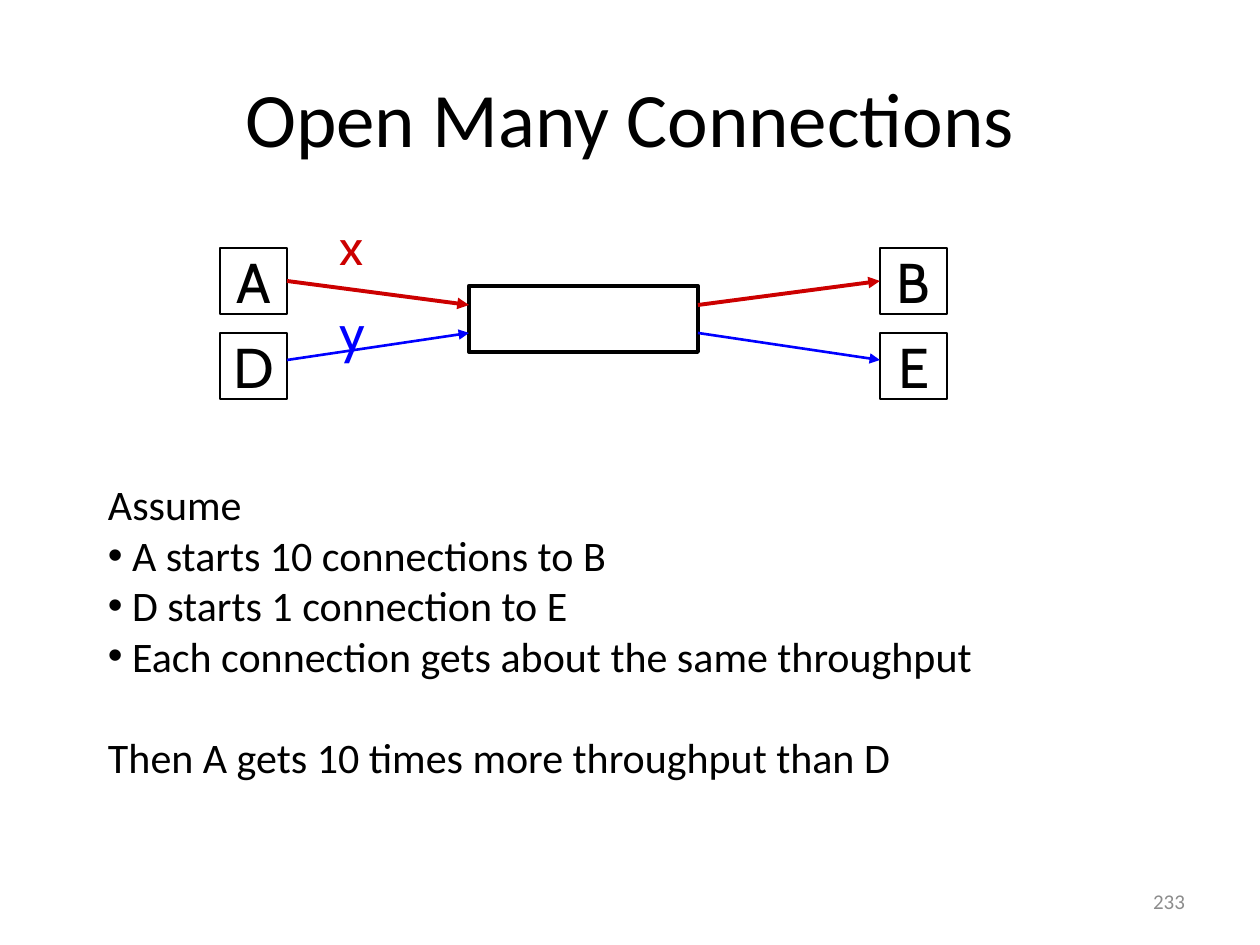
from typing import NamedTuple, Optional

from lxml import etree
from pptx import Presentation
from pptx import util as u
from pptx.dml.color import RGBColor
from pptx.enum import shapes, text
from pptx.oxml import ns

PX = 914400 / 126

BLACK = RGBColor(0x00, 0x00, 0x00)
WHITE = RGBColor(0xFF, 0xFF, 0xFF)
RED = RGBColor(0xCC, 0x00, 0x00)
BLUE = RGBColor(0x00, 0x00, 0xFF)
GRAY = RGBColor(0x8C, 0x8C, 0x8C)

LEFT, CENTER, RIGHT = text.PP_ALIGN.LEFT, text.PP_ALIGN.CENTER, text.PP_ALIGN.RIGHT
TOP, MIDDLE = text.MSO_ANCHOR.TOP, text.MSO_ANCHOR.MIDDLE

NODE_W, NODE_H = 67, 66
SOURCE_X, TARGET_X = 220, 880
ROUTER_X, ROUTER_Y, ROUTER_W = 469, 286, 229
LABEL_X, LABEL_W, LABEL_H = 335, 48, 71
BULLET_INDENT = 24


class Box(NamedTuple):
    x: int
    y: int
    w: int
    h: int


class Style(NamedTuple):
    size: int
    font: str = "Calibri"
    color: RGBColor = BLACK
    align: text.PP_ALIGN = LEFT
    anchor: text.MSO_ANCHOR = MIDDLE
    wrap: bool = True
    inset_x: int = 12
    inset_y: int = 6


class Flow(NamedTuple):
    """One source and target pair, with its arrows through the router."""
    source: str
    target: str
    label: str
    color: RGBColor
    width: float
    node_y: int
    node_port_y: int
    router_port_y: int
    label_y: int


class Line(NamedTuple):
    content: str
    bullet: bool = False
    space_before: int = 0


FLOWS = [
    Flow("A", "B", "x", RED, 2.25, 248, 281, 305, 210),
    Flow("D", "E", "y", BLUE, 1.5, 333, 360, 333, 296),
]
BODY = [
    Line("Assume"),
    Line("A starts 10 connections to B", bullet=True),
    Line("D starts 1 connection to E", bullet=True),
    Line("Each connection gets about the same throughput", bullet=True),
    Line("Then A gets 10 times more throughput than D", space_before=29),
]
NODE_STYLE = Style(32, "Cabin", align=CENTER, wrap=False, inset_x=5, inset_y=3)


def px(n: float) -> u.Emu:
    return u.Emu(round(n * PX))


def set_all(obj, values: dict) -> None:
    for name, value in values.items():
        setattr(obj, name, value)


def add_bullet(p) -> None:
    pPr = p._p.get_or_add_pPr()
    pPr.set("marL", str(px(BULLET_INDENT)))
    pPr.set("indent", str(-px(BULLET_INDENT)))
    etree.SubElement(pPr, ns.qn("a:buFont")).set("typeface", "Arial")
    etree.SubElement(pPr, ns.qn("a:buChar")).set("char", "•")


def write(tf, lines: list[Line], style: Style) -> None:
    set_all(tf, {
        "word_wrap": style.wrap, "vertical_anchor": style.anchor,
        "margin_left": px(style.inset_x), "margin_right": px(style.inset_x),
        "margin_top": px(style.inset_y), "margin_bottom": px(style.inset_y),
    })
    for i, line in enumerate(lines):
        p = tf.add_paragraph() if i else tf.paragraphs[0]
        p.alignment = style.align
        if line.space_before:
            p.space_before = u.Pt(line.space_before)
        if line.bullet:
            add_bullet(p)
        r = p.add_run()
        r.text = line.content
        set_all(r.font, {"size": u.Pt(style.size), "name": style.font})
        r.font.color.rgb = style.color


def add_text(sl, box: Box, lines: list[Line], style: Style) -> None:
    sp = sl.shapes.add_textbox(*map(px, box))
    write(sp.text_frame, lines, style)


def add_rect(sl, box: Box, width: float, label: Optional[str] = None) -> None:
    sp = sl.shapes.add_shape(shapes.MSO_SHAPE.RECTANGLE, *map(px, box))
    sp.shadow.inherit = False
    sp.fill.solid()
    sp.fill.fore_color.rgb = WHITE
    sp.line.color.rgb = BLACK
    sp.line.width = u.Pt(width)
    if label:
        write(sp.text_frame, [Line(label)], NODE_STYLE)


def add_arrow(sl, x1: int, y1: int, x2: int, y2: int,
              color: RGBColor, width: float) -> None:
    cn = sl.shapes.add_connector(shapes.MSO_CONNECTOR.STRAIGHT,
                                 *map(px, (x1, y1, x2, y2)))
    cn.line.color.rgb = color
    cn.line.width = u.Pt(width)
    ln = cn.line._get_or_add_ln()
    etree.SubElement(ln, ns.qn("a:tailEnd")).set("type", "triangle")
    etree.SubElement(cn._element.spPr, ns.qn("a:effectLst"))


def add_flow(sl, f: Flow) -> None:
    for x, name in ((SOURCE_X, f.source), (TARGET_X, f.target)):
        add_rect(sl, Box(x, f.node_y, NODE_W, NODE_H), 0.75, name)
    add_arrow(sl, SOURCE_X + NODE_W, f.node_port_y,
              ROUTER_X, f.router_port_y, f.color, f.width)
    add_arrow(sl, ROUTER_X + ROUTER_W, f.router_port_y,
              TARGET_X, f.node_port_y, f.color, f.width)
    add_text(sl, Box(LABEL_X, f.label_y, LABEL_W, LABEL_H), [Line(f.label)],
             NODE_STYLE._replace(size=29, color=f.color, align=LEFT))


def main() -> None:
    prs = Presentation()
    set_all(prs, {"slide_width": u.Inches(10), "slide_height": u.Inches(7.5)})
    sl = prs.slides.add_slide(prs.slide_layouts[6])

    add_text(sl, Box(63, 38, 1134, 157), [Line("Open Many Connections")],
             Style(44, align=CENTER))
    add_rect(sl, Box(ROUTER_X, ROUTER_Y, ROUTER_W, NODE_H), 2.25)
    for flow in FLOWS:
        add_flow(sl, flow)
    add_text(sl, Box(97, 473, 1017, 316), BODY,
             Style(24, anchor=TOP, inset_x=11))
    add_text(sl, Box(903, 876, 294, 50), [Line("233")],
             Style(12, color=GRAY, align=RIGHT))

    prs.save("out.pptx")


if __name__ == "__main__":
    main()
